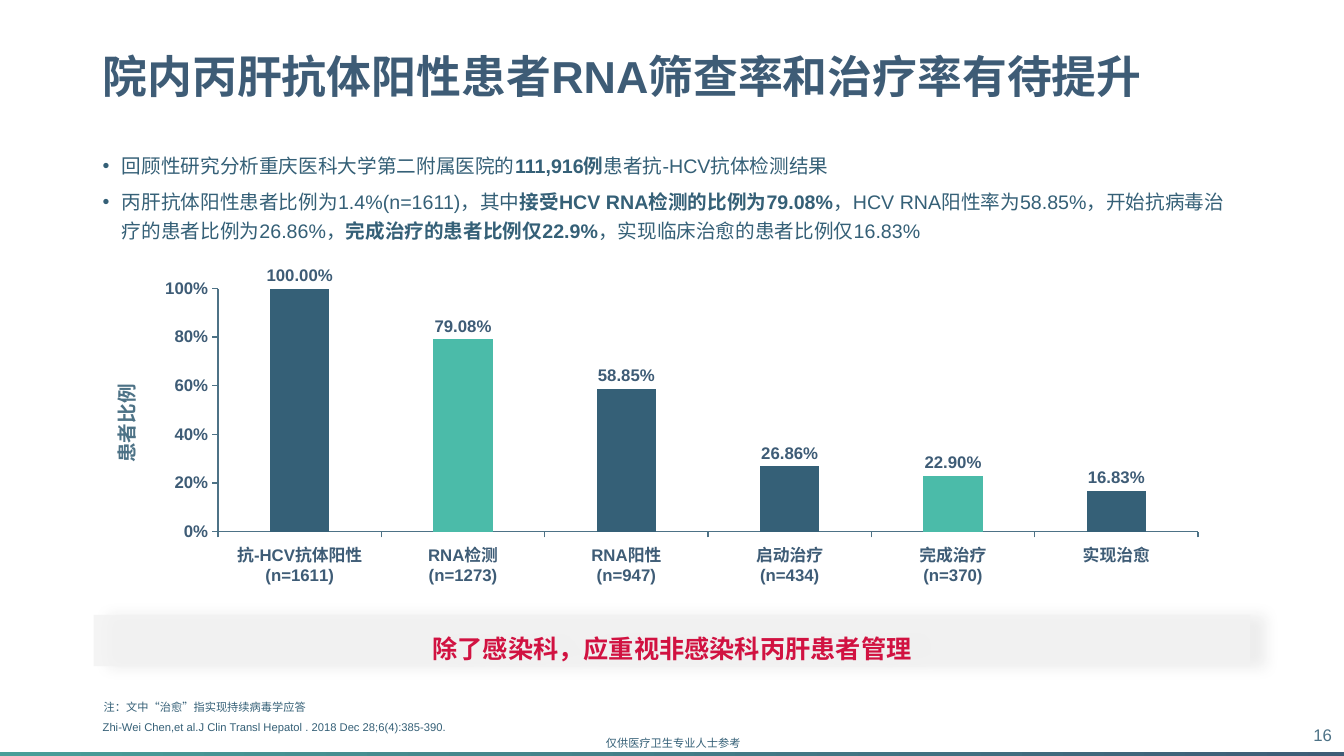
from dataclasses import dataclass

from lxml.etree import SubElement
from pptx import Presentation
from pptx.chart.data import CategoryChartData
from pptx.dml.color import RGBColor
from pptx.enum.chart import XL_CHART_TYPE, XL_LABEL_POSITION, XL_TICK_MARK
from pptx.enum.shapes import MSO_SHAPE
from pptx.enum.text import MSO_ANCHOR, PP_ALIGN
from pptx.oxml import parse_xml
from pptx.oxml.ns import nsdecls, qn
from pptx.util import Inches, Pt

FONT = "Arial"
NAVY, TEAL_BLUE, SLATE = "3E5C76", "356077", "4D7286"
MINT, RED, PALE = "4BBBA9", "D11241", "F2F2F2"


@dataclass
class Run:
    text: str
    bold: bool = False


@dataclass
class Label:
    text: str
    box: tuple[float, float, float, float]
    size: float
    color: str
    bold: bool = False
    align: PP_ALIGN = PP_ALIGN.LEFT
    anchor: MSO_ANCHOR = MSO_ANCHOR.TOP
    spacing: float = 1.0
    rotation: float = 0
    wrap: bool = True


@dataclass
class Stage:
    name: str
    share: float
    color: str = TEAL_BLUE


LABELS = [
    Label("仅供医疗卫生专业人士参考", (5.91, 7.26, 1.55, 0.24), 8, TEAL_BLUE, wrap=False),
    Label("院内丙肝抗体阳性患者RNA筛查率和治疗率有待提升", (0.92, 0.4, 11.5, 0.77), 32, NAVY,
          bold=True, anchor=MSO_ANCHOR.MIDDLE, spacing=0.9),
    Label("16", (12.73, 7.08, 0.58, 0.42), 12, SLATE,
          align=PP_ALIGN.RIGHT, anchor=MSO_ANCHOR.MIDDLE),
    Label("患者比例", (0.39, 4.03, 1.75, 0.34), 14, SLATE,
          bold=True, align=PP_ALIGN.CENTER, rotation=270),
    Label("Zhi-Wei Chen,et al.J Clin Transl Hepatol . 2018 Dec 28;6(4):385-390.",
          (0.92, 6.92, 10.23, 0.58), 8, TEAL_BLUE, anchor=MSO_ANCHOR.MIDDLE),
    Label("注：文中“治愈”指实现持续病毒学应答", (0.93, 6.9, 6.67, 0.24), 8, TEAL_BLUE),
]

FINDINGS = [
    [
        Run("回顾性研究分析重庆医科大学第二附属医院的"),
        Run("111,916例", True),
        Run("患者抗-HCV抗体检测结果"),
    ],
    [
        Run("丙肝抗体阳性患者比例为1.4%(n=1611)，其中"),
        Run("接受HCV RNA检测的比例为79.08%", True),
        Run("，HCV RNA阳性率为58.85%，开始抗病毒治疗的患者比例为26.86%，"),
        Run("完成治疗的患者比例仅22.9%", True),
        Run("，实现临床治愈的患者比例仅16.83%"),
    ],
]

STAGES = [
    Stage("抗-HCV抗体阳性\n(n=1611)", 1),
    Stage("RNA检测\n(n=1273)", 0.7908, MINT),
    Stage("RNA阳性\n(n=947)", 0.5885),
    Stage("启动治疗\n(n=434)", 0.2686),
    Stage("完成治疗\n(n=370)", 0.229, MINT),
    Stage("实现治愈", 0.1683),
]


def rgb(color: str) -> RGBColor:
    return RGBColor.from_string(color)


def style_font(font, size: float, color: str, bold: bool = False) -> None:
    font.name = FONT
    font.size = Pt(size)
    font.bold = bold
    font.color.rgb = rgb(color)


def add_run(paragraph, text: str, *, size: float, color: str, bold: bool = False) -> None:
    run = paragraph.add_run()
    run.text = text
    style_font(run.font, size, color, bold)


def add_text_box(slide, box: tuple[float, float, float, float]):
    shape = slide.shapes.add_textbox(*map(Inches, box))
    shape.text_frame.word_wrap = True
    return shape


def add_label(slide, label: Label) -> None:
    shape = add_text_box(slide, label.box)
    shape.rotation = label.rotation
    shape.text_frame.word_wrap = label.wrap
    shape.text_frame.vertical_anchor = label.anchor
    paragraph = shape.text_frame.paragraphs[0]
    paragraph.alignment = label.align
    paragraph.line_spacing = label.spacing
    add_run(paragraph, label.text, size=label.size, color=label.color, bold=label.bold)


def add_rectangle(slide, box: tuple[float, float, float, float]):
    shape = slide.shapes.add_shape(MSO_SHAPE.RECTANGLE, *map(Inches, box))
    shape.shadow.inherit = False
    shape.line.fill.background()
    return shape


def add_footer_band(slide) -> None:
    band = add_rectangle(slide, (-0.01, 7.46, 13.39, 0.07))
    band.fill.gradient()
    band.fill.gradient_angle = 0
    for stop, color in zip(band.fill.gradient_stops, ("489E98", NAVY)):
        stop.color.rgb = rgb(color)


def add_findings(slide) -> None:
    frame = add_text_box(slide, (0.92, 1.43, 11.5, 1.1)).text_frame
    for index, runs in enumerate(FINDINGS):
        paragraph = frame.add_paragraph() if index else frame.paragraphs[0]
        properties = paragraph._p.get_or_add_pPr()
        properties.set("marL", str(Inches(0.19)))
        properties.set("indent", str(Inches(-0.19)))
        SubElement(properties, qn("a:buFont"), typeface=FONT)
        SubElement(properties, qn("a:buChar"), char="•")
        paragraph.line_spacing = 1.2
        paragraph.space_before = Pt(6 if index else 0)
        for run in runs:
            add_run(paragraph, run.text, size=14, color=TEAL_BLUE, bold=run.bold)


def add_banner(slide) -> None:
    banner = add_rectangle(slide, (0.93, 6.1, 11.47, 0.51))
    banner.fill.solid()
    banner.fill.fore_color.rgb = rgb(PALE)
    fill_color = banner._element.spPr.find(qn("a:solidFill")).find(qn("a:srgbClr"))
    SubElement(fill_color, qn("a:alpha"), val="80000")
    effects = banner._element.spPr.find(qn("a:effectLst"))
    shadow = SubElement(effects, qn("a:outerShdw"), blurRad=str(Pt(10)), dist=str(Pt(10)),
                        dir="0", algn="l", rotWithShape="0")
    shadow_color = SubElement(shadow, qn("a:srgbClr"), val="262626")
    SubElement(shadow_color, qn("a:alpha"), val="10000")
    banner.text_frame.vertical_anchor = MSO_ANCHOR.MIDDLE
    paragraph = banner.text_frame.paragraphs[0]
    paragraph.alignment = PP_ALIGN.CENTER
    paragraph.line_spacing = 1.5
    paragraph.space_after = Pt(12)
    add_run(paragraph, "除了感染科，应重视非感染科丙肝患者管理", size=18, color=RED, bold=True)


def set_plot_layout(chart, x: float, y: float, w: float, h: float) -> None:
    """Fix the inner plot area, in fractions of the chart."""
    plot_area = chart._chartSpace.chart.plotArea
    for layout in plot_area.findall(qn("c:layout")):
        plot_area.remove(layout)
    sizes = "".join(f'<c:{key} val="{value}"/>' for key, value in zip("xywh", (x, y, w, h)))
    plot_area.insert(0, parse_xml(
        f'<c:layout {nsdecls("c")}><c:manualLayout><c:layoutTarget val="inner"/>'
        f'<c:xMode val="edge"/><c:yMode val="edge"/>{sizes}</c:manualLayout></c:layout>'))


def add_stage_chart(slide) -> None:
    data = CategoryChartData(number_format="0.00%")
    data.categories = [stage.name for stage in STAGES]
    data.add_series("患者比例", [stage.share for stage in STAGES])
    box = map(Inches, (1.5, 2.46, 10.53, 3.54))
    chart = slide.shapes.add_chart(XL_CHART_TYPE.COLUMN_CLUSTERED, *box, data).chart
    style_font(chart.font, 12, NAVY, True)
    chart.has_legend = False
    chart.has_title = False
    set_plot_layout(chart, 0.063, 0.114, 0.923, 0.681)

    for axis in (chart.category_axis, chart.value_axis):
        axis.has_major_gridlines = False
        axis.major_tick_mark = XL_TICK_MARK.OUTSIDE
        axis.minor_tick_mark = XL_TICK_MARK.NONE
        axis.format.line.color.rgb = rgb(SLATE)
        axis.format.line.width = Pt(1)
        style_font(axis.tick_labels.font, 12, NAVY, True)
    chart.value_axis.minimum_scale = 0
    chart.value_axis.maximum_scale = 1
    chart.value_axis.major_unit = 0.2
    chart.value_axis.tick_labels.number_format = "0%"
    chart.value_axis.tick_labels.number_format_is_linked = False

    plot = chart.plots[0]
    plot.vary_by_categories = False
    plot.gap_width = 175
    plot.overlap = 12
    plot.has_data_labels = True
    labels = plot.data_labels
    labels.show_value = True
    labels.position = XL_LABEL_POSITION.OUTSIDE_END
    labels.number_format = "0.00%"
    labels.number_format_is_linked = False
    style_font(labels.font, 12, NAVY, True)
    for index, stage in enumerate(STAGES):
        fill = plot.series[0].points[index].format.fill
        fill.solid()
        fill.fore_color.rgb = rgb(stage.color)


def main() -> None:
    presentation = Presentation()
    presentation.slide_width, presentation.slide_height = Inches(13.33), Inches(7.5)
    slide = presentation.slides.add_slide(presentation.slide_layouts[6])
    add_footer_band(slide)
    add_findings(slide)
    add_banner(slide)
    add_stage_chart(slide)
    for label in LABELS:
        add_label(slide, label)
    presentation.save("out.pptx")


if __name__ == "__main__":
    main()
